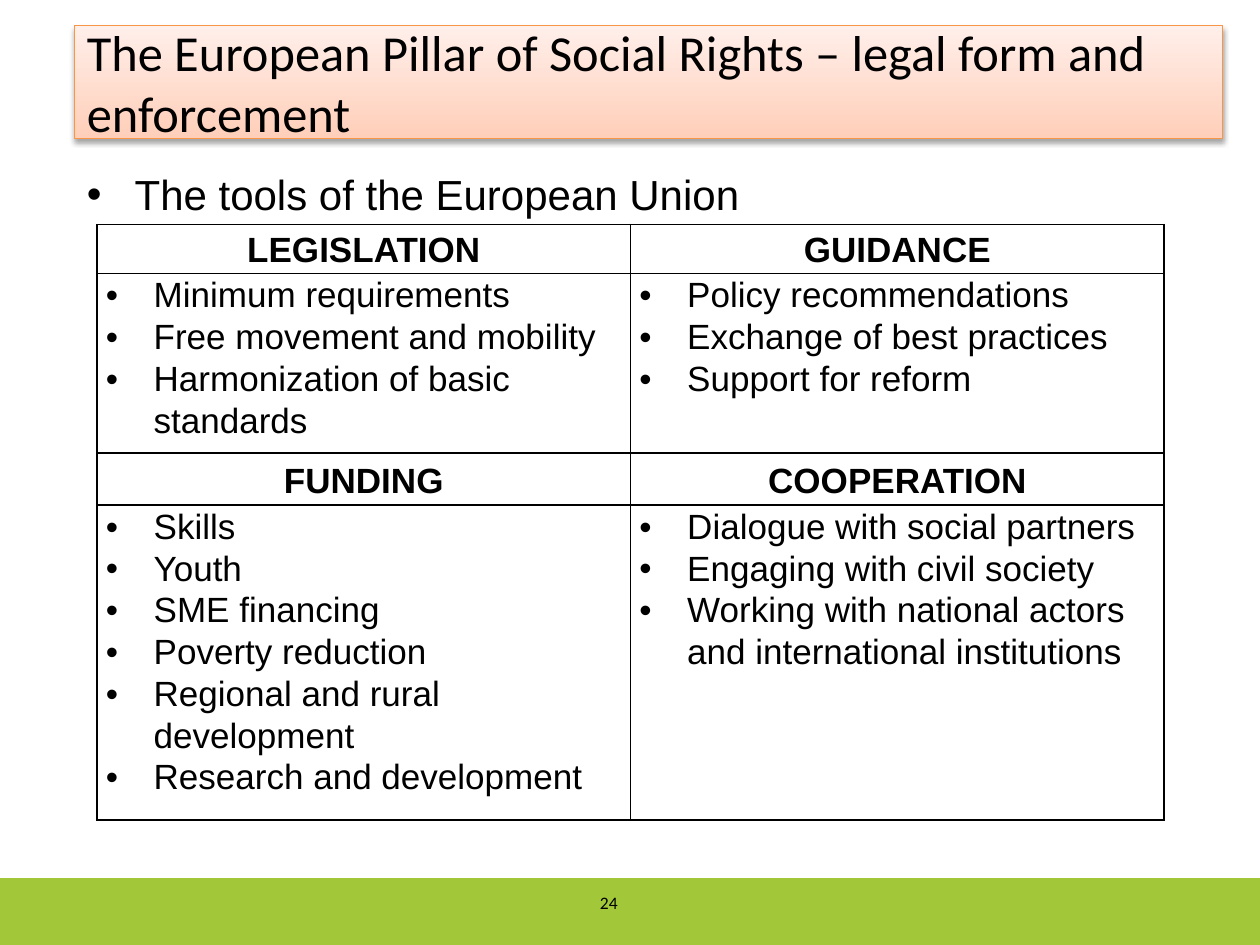
import pptx
import pptx.util
import pptx.dml.color
import pptx.enum.shapes
import pptx.enum.text
import pptx.oxml
import pptx.oxml.ns

ALIGN = pptx.enum.text.PP_ALIGN
ANCHOR = pptx.enum.text.MSO_ANCHOR
BLACK, GREEN, ORANGE = "000000", "A2C83A", "F79646"
BLUSH, PEACH = "FFEFEA", "FFCFB9"

TOOLS = [
    [("LEGISLATION", ["Minimum requirements", "Free movement and mobility",
                      "Harmonization of basic standards"]),
     ("GUIDANCE", ["Policy recommendations", "Exchange of best practices",
                   "Support for reform"])],
    [("FUNDING", ["Skills", "Youth", "SME financing", "Poverty reduction",
                  "Regional and rural development",
                  "Research and development"]),
     ("COOPERATION", ["Dialogue with social partners",
                      "Engaging with civil society",
                      "Working with national actors and international institutions"])],
]


def color(text):
    return pptx.dml.color.RGBColor.from_string(text)


def node(xml):
    """Parse one DrawingML element written with the a: prefix."""
    head, tail = xml.split(">", 1)
    close = "/" if head.endswith("/") else ""
    space = pptx.oxml.ns.nsdecls("a")
    return pptx.oxml.parse_xml(f"{head.rstrip('/')} {space}{close}>{tail}")


class Deck:
    """One slide on a grid of 100 columns by 75 rows."""

    font, head_font = "Arial", "Calibri"
    hang = pptx.util.Inches(0.38)

    def __init__(self):
        self.show = pptx.Presentation()
        self.show.slide_width = pptx.util.Inches(10)
        self.show.slide_height = pptx.util.Inches(7.5)
        self.slide = self.show.slides.add_slide(self.show.slide_layouts[6])

    def unit(self, count):
        return round(count * self.show.slide_width / 100)

    def area(self, *box):
        return [self.unit(side) for side in box]

    def rect(self, box, fill):
        shape = self.slide.shapes.add_shape(
            pptx.enum.shapes.MSO_SHAPE.RECTANGLE, *self.area(*box))
        shape.shadow.inherit = False
        shape.fill.solid()
        shape.fill.fore_color.rgb = color(fill)
        shape.line.fill.background()
        return shape

    def words(self, frame, lines, size, font=None, bold=False,
              align=ALIGN.LEFT, bullet=False, pitch=None):
        frame.word_wrap = True
        frame.text = "\n".join(lines)
        for para in frame.paragraphs:
            para.alignment = align
            if pitch:
                para.line_spacing = pitch
            if bullet:
                props = para._p.get_or_add_pPr()
                props.set("marL", str(self.hang))
                props.set("indent", str(-self.hang))
                props.append(node('<a:buFont typeface="Arial"/>'))
                props.append(node('<a:buChar char="•"/>'))
            for run in para.runs:
                run.font.name = font or self.font
                run.font.size = pptx.util.Pt(size)
                run.font.bold = bold
                run.font.color.rgb = color(BLACK)

    def title(self, box, text):
        shape = self.rect(box, PEACH)
        shape.fill.gradient()
        shape.fill.gradient_angle = 270
        for stop, tint in zip(shape.fill.gradient_stops, (BLUSH, PEACH)):
            stop.color.rgb = color(tint)
        shape.line.color.rgb = color(ORANGE)
        shape.line.width = pptx.util.Pt(0.75)
        effects = shape._element.spPr.find(pptx.oxml.ns.qn("a:effectLst"))
        effects.append(node(
            '<a:outerShdw blurRad="40000" dist="23000" dir="5400000" rotWithShape="0">'
            '<a:srgbClr val="000000"><a:alpha val="35000"/></a:srgbClr></a:outerShdw>'))
        shape.text_frame.vertical_anchor = ANCHOR.MIDDLE
        self.words(shape.text_frame, [text], 28.8, self.head_font)

    def text(self, box, text, size, anchor=ANCHOR.TOP, **style):
        frame = self.slide.shapes.add_textbox(*self.area(*box)).text_frame
        self.words(frame, [text], size, **style)
        frame.vertical_anchor = anchor

    def cell(self, cell, lines, **style):
        cell.margin_left = cell.margin_right = self.unit(0.7)
        cell.margin_top = cell.margin_bottom = 0
        props = cell._tc.get_or_add_tcPr()
        for side in "LRTB":
            props.append(node(
                f'<a:ln{side} w="12700"><a:solidFill><a:srgbClr val="{BLACK}"/>'
                f'</a:solidFill></a:ln{side}>'))
        cell.fill.background()
        self.words(cell.text_frame, lines, 20, **style)

    def table(self, box, rows, groups):
        """Give each group a row of headings above a row of bullet lists."""
        table = self.slide.shapes.add_table(
            len(rows), len(groups[0]), *self.area(*box)).table
        table.first_row = table.horz_banding = False
        for row, high in zip(table.rows, rows):
            row.height = self.unit(high)
        for i, group in enumerate(groups):
            for j, (name, items) in enumerate(group):
                head = table.cell(2 * i, j)
                self.cell(head, [name], bold=True, align=ALIGN.CENTER)
                head.vertical_anchor = ANCHOR.MIDDLE
                head.margin_top = self.unit(0.3)
                self.cell(table.cell(2 * i + 1, j), items,
                          bullet=True, pitch=1.07)


def main():
    deck = Deck()
    deck.rect((0, 69.7, 100, 5.3), GREEN)
    deck.title((5.9, 2, 91.1, 9),
               "The European Pillar of Social Rights – legal form and enforcement")
    deck.text((5.9, 12.9, 91.1, 4.8), "The tools of the European Union", 24,
              bullet=True)
    deck.text((39.8, 70.1, 10.2, 3.1), "24", 10, ANCHOR.MIDDLE,
              font=deck.head_font, align=ALIGN.RIGHT)
    deck.table((7.7, 17.8, 84.7, 47.2), (3.9, 14.2, 4.1, 25), TOOLS)
    deck.show.save("out.pptx")


if __name__ == "__main__":
    main()
